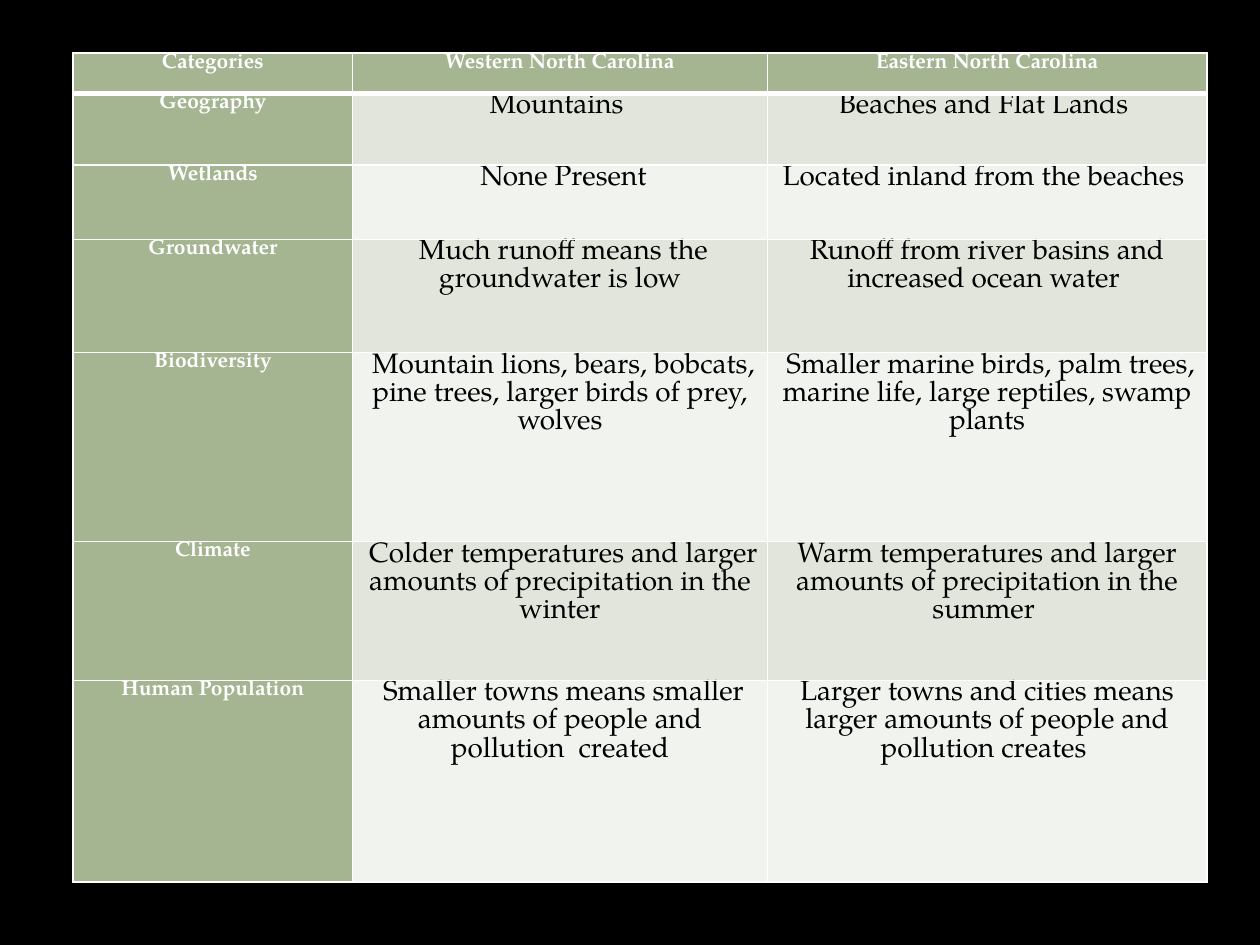
from lxml.etree import SubElement
from pptx import Presentation
from pptx.dml.color import RGBColor
from pptx.enum.text import PP_ALIGN
from pptx.oxml.ns import qn
from pptx.util import Inches, Pt

FONT = "TeX Gyre Pagella"
COLORS = {
    "back": "000000",
    "head": "A5B592",
    "odd": "E1E5DC",
    "even": "F0F3EE",
    "light": "FFFFFF",
    "dark": "000000",
}
WIDTHS = [2.22, 3.29, 3.49]
HEIGHTS = [0.32, 0.57, 0.59, 0.9, 1.5, 1.1, 1.6]
ROWS = [
    ("Categories", "Western North Carolina", "Eastern North Carolina"),
    ("Geography", "Mountains ", "Beaches and Flat Lands "),
    ("Wetlands", " None Present", "Located inland from the beaches "),
    ("Groundwater", " Much runoff means the groundwater is low",
     "Runoff from river basins and increased ocean water "),
    ("Biodiversity",
     " Mountain lions, bears, bobcats, pine trees, larger birds of prey, wolves",
     " Smaller marine birds, palm trees, marine life, large reptiles, swamp plants"),
    ("Climate",
     " Colder temperatures and larger amounts of precipitation in the winter",
     "Warm temperatures and larger amounts of precipitation in the summer "),
    ("Human Population",
     " Smaller towns means smaller amounts of people and pollution  created",
     "Larger towns and cities means larger amounts of people and pollution creates "),
]


def color(name):
    return RGBColor.from_string(COLORS[name])


def add_edge(cell, side, width):
    line = SubElement(cell._tc.get_or_add_tcPr(), qn(f"a:ln{side}"), w=str(Pt(width)))
    fill = SubElement(line, qn("a:solidFill"))
    SubElement(fill, qn("a:srgbClr"), val=COLORS["light"])


def fill_cell(cell, text, row, col):
    label = row == 0 or col == 0
    for side in "LRTB":
        thick = (row, side) in [(0, "B"), (1, "T")]
        add_edge(cell, side, 3 if thick else 1)
    cell.fill.solid()
    band = "odd" if row % 2 else "even"
    cell.fill.fore_color.rgb = color("head" if label else band)
    cell.margin_left = cell.margin_right = Inches(0.07)
    cell.margin_top = cell.margin_bottom = 0
    cell.text = text
    para = cell.text_frame.paragraphs[0]
    para.alignment = PP_ALIGN.CENTER
    para.font.name = FONT
    para.font.size = Pt(12 if label else 16)
    para.font.bold = label
    para.font.color.rgb = color("light" if label else "dark")


def add_grid(slide):
    frame = slide.shapes.add_table(
        len(ROWS), len(WIDTHS), Inches(0.58), Inches(0.42),
        Inches(sum(WIDTHS)), Inches(sum(HEIGHTS)))
    table = frame.table
    for col, width in zip(table.columns, WIDTHS):
        col.width = Inches(width)
    for row, height in zip(table.rows, HEIGHTS):
        row.height = Inches(height)
    for row, texts in enumerate(ROWS):
        for col, text in enumerate(texts):
            fill_cell(table.cell(row, col), text, row, col)


def main():
    deck = Presentation()
    deck.slide_width = Inches(10)
    deck.slide_height = Inches(7.5)
    slide = deck.slides.add_slide(deck.slide_layouts[6])
    slide.background.fill.solid()
    slide.background.fill.fore_color.rgb = color("back")
    add_grid(slide)
    deck.save("out.pptx")


if __name__ == "__main__":
    main()
